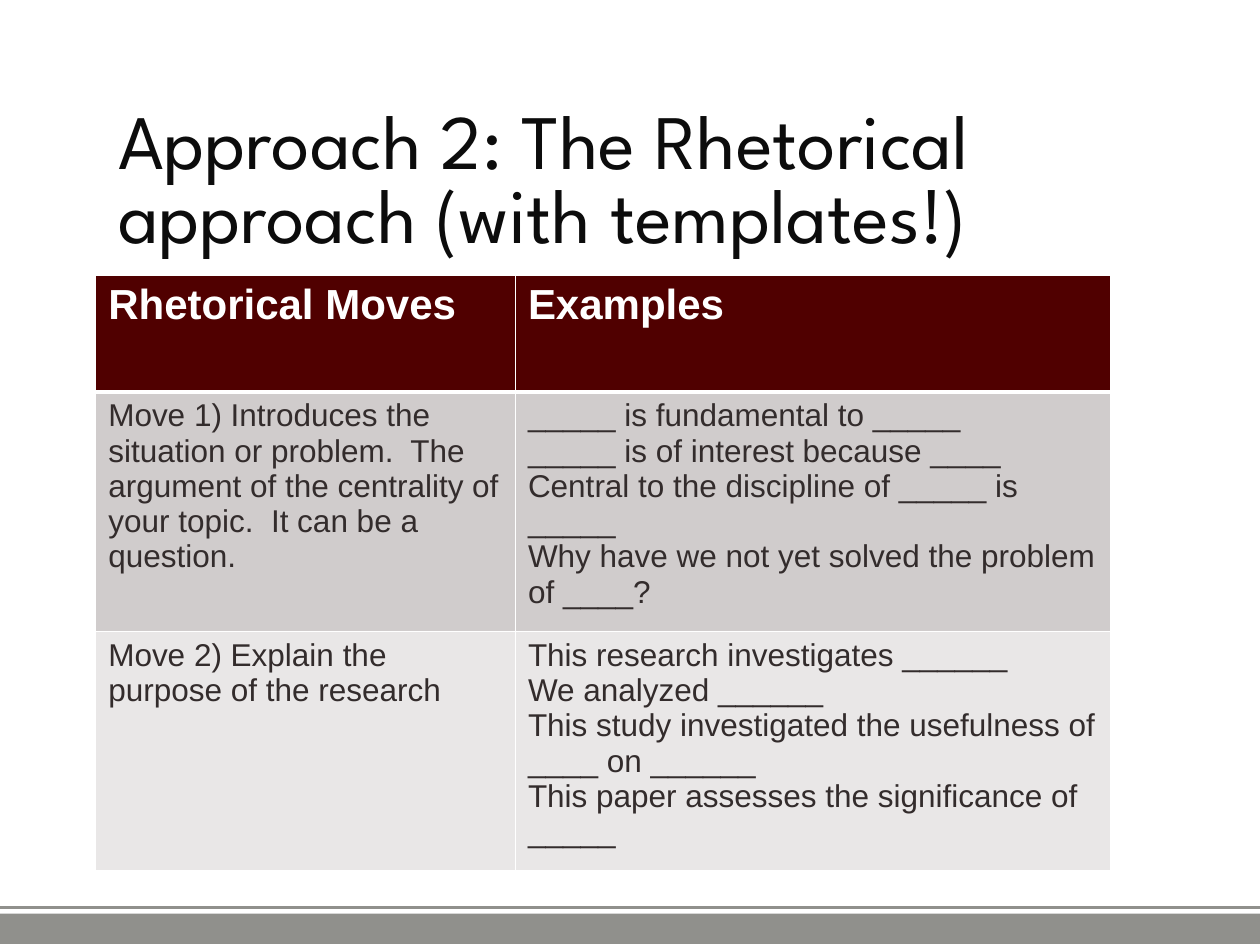
from dataclasses import dataclass

from lxml import etree
from pptx import Presentation
from pptx import util as u
from pptx.dml.color import RGBColor
from pptx.enum import shapes, text
from pptx.oxml.ns import qn


@dataclass(frozen=True)
class Theme:
    ink: str = "0C0C0C"
    body: str = "332C2C"
    white: str = "FFFFFF"
    grey: str = "90908C"
    head: str = "500000"
    bands: tuple = ("D0CCCC", "E9E7E7")
    title: int = 44
    label: int = 24
    small: int = 18
    face: str = "League Spartan"
    sans: str = "Arial"


THEME = Theme()
ROWS = [
    ("Rhetorical Moves", "Examples"),
    (
        "Move 1) Introduces the situation or problem.  The argument of the "
        "centrality of your topic.  It can be a question.",
        "_____ is fundamental to _____\n"
        "_____ is of interest because ____\n"
        "Central to the discipline of _____ is _____\n"
        "Why have we not yet solved the problem of ____?",
    ),
    (
        "Move 2) Explain the purpose of the research",
        "This research investigates ______\vWe analyzed ______\n"
        "This study investigated the usefulness of ____ on ______\n"
        "This paper assesses the significance of _____",
    ),
]


def color(code):
    return RGBColor.from_string(code)


def style(frame, face, size, code, bold=False):
    for para in frame.paragraphs:
        for run in para.runs:
            font = run.font
            font.name, font.size, font.bold = face, u.Pt(size), bold
            font.color.rgb = color(code)


def border(cell, side, width):
    line = etree.SubElement(cell._tc.get_or_add_tcPr(), qn(f"a:ln{side}"),
                            w=str(u.Pt(width)))
    fill = etree.SubElement(line, qn("a:solidFill"))
    etree.SubElement(fill, qn("a:srgbClr"), val=THEME.white)


def add_title(slide, left, top, width, height):
    box = slide.shapes.add_textbox(left, top, width, height)
    frame = box.text_frame
    frame.word_wrap = True
    frame.vertical_anchor = text.MSO_ANCHOR.MIDDLE
    frame.margin_left = frame.margin_right = u.Cm(0.25)
    frame.margin_top = frame.margin_bottom = u.Cm(0.25)
    frame.text = "Approach 2: The Rhetorical approach (with templates!)"
    frame.paragraphs[0].line_spacing = 0.8
    style(frame, THEME.face, THEME.title, THEME.ink)


def add_moves(slide, left, top, width, height):
    table = slide.shapes.add_table(len(ROWS), 2, left, top, width, height).table
    first = u.Cm(8.46)
    table.columns[0].width = first
    table.columns[1].width = width - first
    head = u.Cm(2.35)
    for num, (row, words) in enumerate(zip(table.rows, ROWS)):
        row.height = (height - head) // (len(ROWS) - 1) if num else head
        for cell, word in zip(row.cells, words):
            cell.text_frame.text = word
            if num:
                style(cell.text_frame, THEME.sans, THEME.small, THEME.body)
            else:
                style(cell.text_frame, THEME.sans, THEME.label, THEME.white, True)
            for side in "LRTB":
                thick = (num, side) in ((0, "B"), (1, "T"))
                border(cell, side, 3 if thick else 1)
            cell.fill.solid()
            shade = THEME.bands[num - 1] if num else THEME.head
            cell.fill.fore_color.rgb = color(shade)


def add_foot(slide, left, top, width, height):
    band = u.Cm(0.61)
    bar = slide.shapes.add_shape(shapes.MSO_SHAPE.RECTANGLE, left,
                                 top + height - band, width, band)
    bar.shadow.inherit = False
    bar.fill.solid()
    bar.fill.fore_color.rgb = color(THEME.grey)
    bar.line.fill.background()
    rule = slide.shapes.add_connector(shapes.MSO_CONNECTOR.STRAIGHT, left, top,
                                      left + width, top)
    rule.line.color.rgb = color(THEME.grey)
    rule.line.width = u.Pt(1.5)
    etree.SubElement(rule._element.spPr, qn("a:effectLst"))


def main():
    deck = Presentation()
    deck.slide_width, deck.slide_height = u.Cm(25.4), u.Cm(19.05)
    slide = deck.slides.add_slide(deck.slide_layouts[6])
    add_foot(slide, 0, u.Cm(18.29), deck.slide_width, u.Cm(0.74))
    add_title(slide, u.Cm(2.13), u.Cm(1.63), u.Cm(20.24), u.Cm(4.17))
    add_moves(slide, u.Cm(1.93), u.Cm(5.55), u.Cm(20.47), u.Cm(11.2))
    deck.save("out.pptx")


if __name__ == "__main__":
    main()
